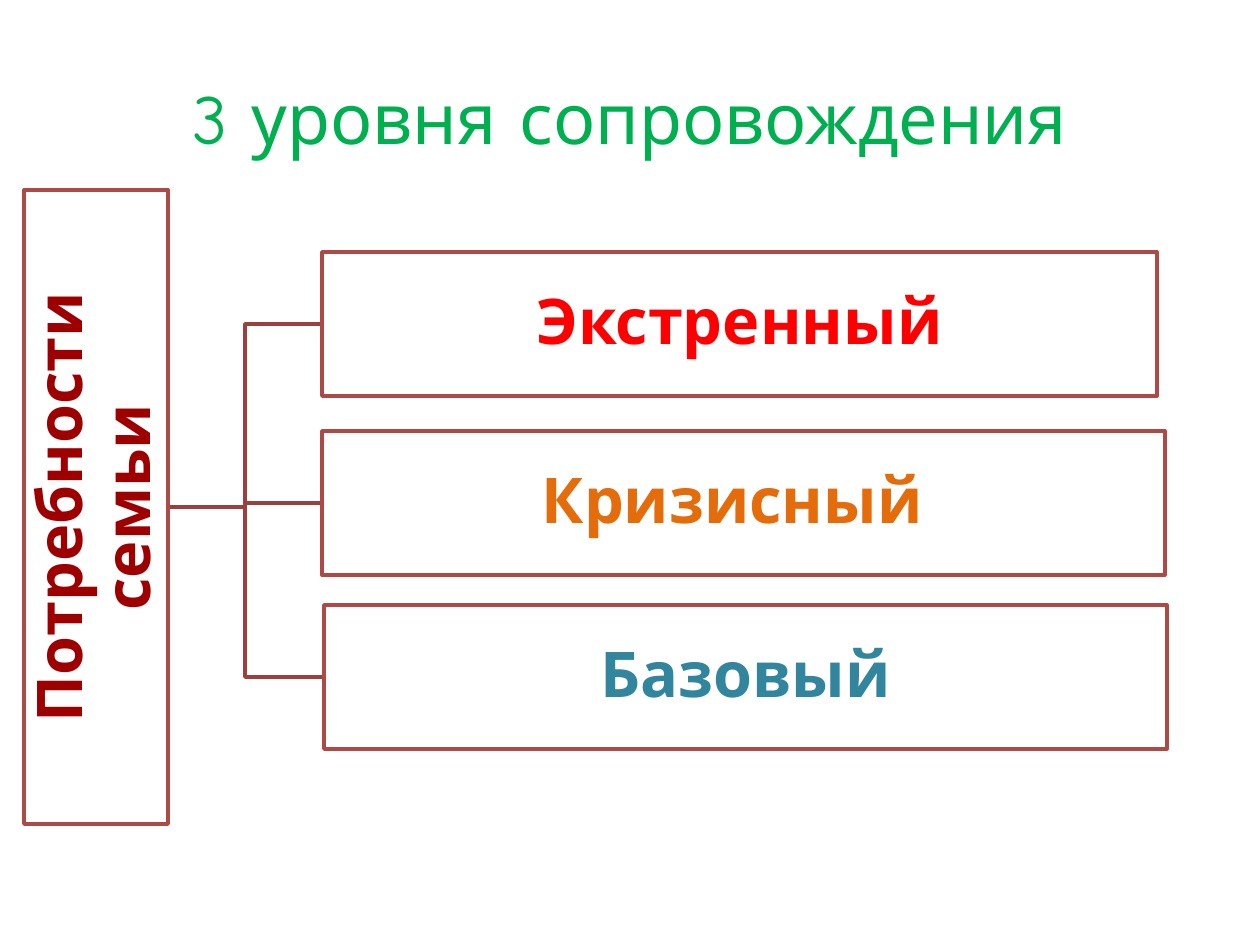
from pptx import Presentation
from pptx.dml.color import RGBColor
from pptx.enum.shapes import MSO_SHAPE
from pptx.enum.text import MSO_ANCHOR, PP_ALIGN
from pptx.util import Pt

PX = 7257  # EMU in one px (126 px to the inch)
FONT = "Comic Neue"
WHITE = RGBColor(0xFF, 0xFF, 0xFF)
GREEN = RGBColor(0x00, 0xB0, 0x50)
BORDER = RGBColor(0xAE, 0x49, 0x46)
BRANCH = RGBColor(0x9A, 0x40, 0x3E)
DARK_RED = RGBColor(0x9E, 0x00, 0x00)
RED = RGBColor(0xFF, 0x00, 0x00)
ORANGE = RGBColor(0xE4, 0x6C, 0x0A)
TEAL = RGBColor(0x31, 0x85, 0x9C)

# Content: text, colour, left, top, width
TITLE = "3 уровня сопровождения"
NEEDS = "Потребности семьи"
LEVELS = [
    ("Экстренный", RED, 322, 252, 835),
    ("Кризисный ", ORANGE, 322, 431, 843),
    ("Базовый", TEAL, 324, 605, 843),
]
BOX_H = 144
NEEDS_LENGTH, NEEDS_X, NEEDS_Y = 634, 96, 507  # length and centre
SPINE_X = 245


def px(*lengths):
    return [length * PX for length in lengths]


def write(frame, text, size, color, bold):
    frame.vertical_anchor = MSO_ANCHOR.MIDDLE
    paragraph = frame.paragraphs[0]
    paragraph.alignment = PP_ALIGN.CENTER
    run = paragraph.add_run()
    run.text = text
    run.font.color.rgb = color
    for key, value in {"name": FONT, "size": Pt(size), "bold": bold}.items():
        setattr(run.font, key, value)


def add_box(slide, text, color, left, top, width, rotation=0):
    box = slide.shapes.add_shape(MSO_SHAPE.RECTANGLE, *px(left, top, width, BOX_H))
    box.rotation = rotation
    box.shadow.inherit = False
    box.fill.solid()
    box.fill.fore_color.rgb = WHITE
    box.line.color.rgb = BORDER
    box.line.width = Pt(2)
    frame = box.text_frame
    frame.word_wrap = True
    for side in ("left", "top", "right", "bottom"):
        setattr(frame, f"margin_{side}", 4 * PX)
    write(frame, text, 36, color, True)
    frame.paragraphs[0].line_spacing = 0.9


def add_branch(slide, end_x, end_y):
    start_x = NEEDS_X + BOX_H // 2
    builder = slide.shapes.build_freeform(start_x, NEEDS_Y, scale=PX)
    builder.add_line_segments(
        [(SPINE_X, NEEDS_Y), (SPINE_X, end_y), (end_x, end_y)], close=False)
    branch = builder.convert_to_shape()
    branch.shadow.inherit = False
    branch.fill.background()
    branch.line.color.rgb = BRANCH
    branch.line.width = Pt(2)


def main():
    deck = Presentation()
    deck.slide_width, deck.slide_height = px(1260, 945)
    slide = deck.slides.add_slide(deck.slide_layouts[5])

    # Title
    title = slide.shapes.title
    title.left, title.top, title.width, title.height = px(63, 38, 1134, 157)
    write(title.text_frame, TITLE, 40, GREEN, False)

    # Branches from the needs to each level, behind the boxes
    for _, _, left, top, _ in reversed(LEVELS):
        add_branch(slide, left, top + BOX_H // 2)

    # Upright box of needs, then the levels
    add_box(slide, NEEDS, DARK_RED, NEEDS_X - NEEDS_LENGTH // 2,
            NEEDS_Y - BOX_H // 2, NEEDS_LENGTH, rotation=270)
    for level in LEVELS:
        add_box(slide, *level)

    deck.save("out.pptx")


if __name__ == "__main__":
    main()
